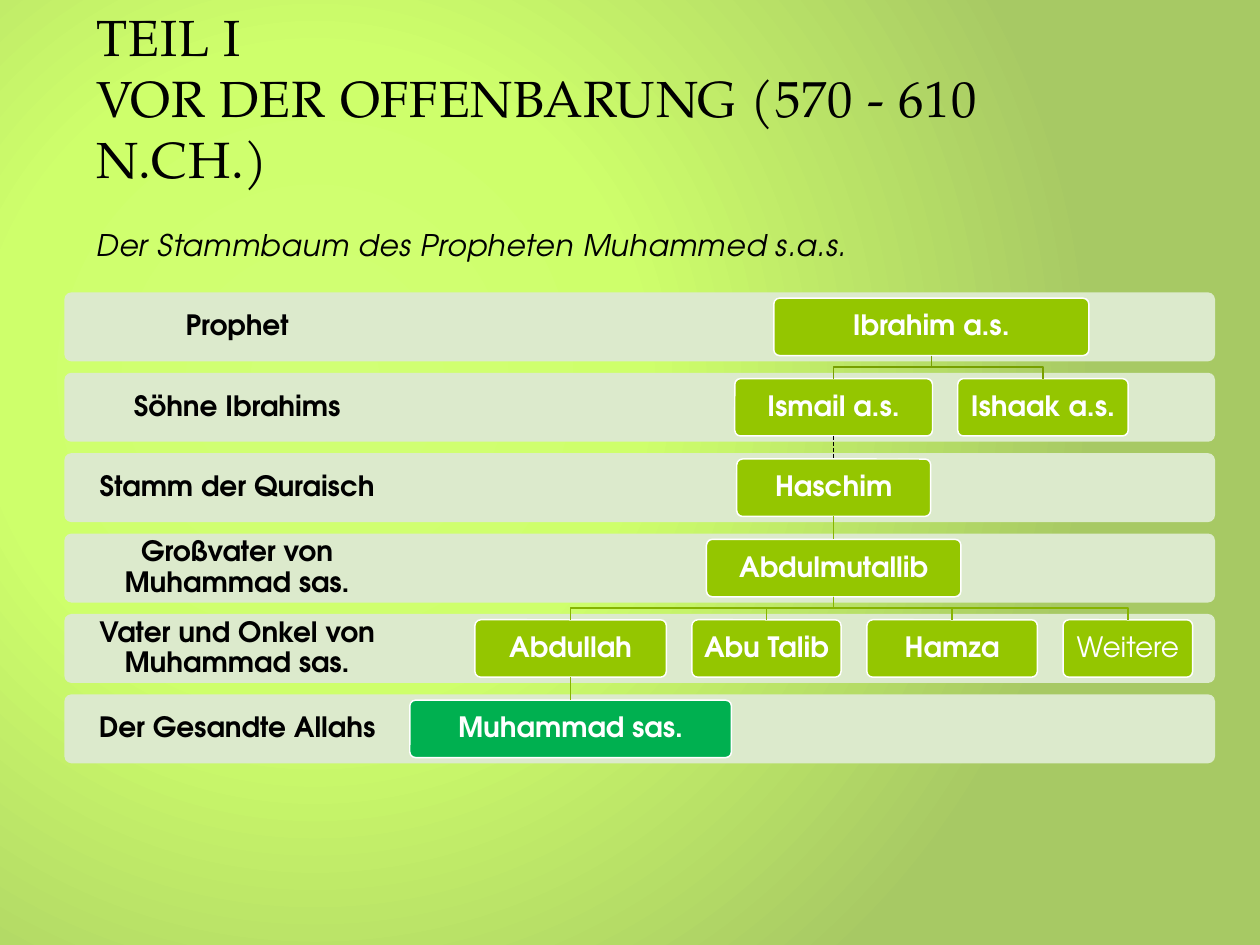
from dataclasses import dataclass
from typing import NamedTuple

from lxml.etree import SubElement
from pptx import Presentation
from pptx.dml.color import RGBColor
from pptx.enum.dml import MSO_LINE_DASH_STYLE as Dash
from pptx.enum.shapes import MSO_CONNECTOR as Connector, MSO_SHAPE as Shape
from pptx.enum.text import MSO_ANCHOR as Anchor, MSO_AUTO_SIZE as AutoSize, PP_ALIGN as Align
from pptx.oxml.ns import qn
from pptx.util import Pt


@dataclass(frozen=True)
class Theme:
    heading_font: str = "TeX Gyre Pagella"
    body_font: str = "TeX Gyre Adventor"
    title_size: float = 29
    subtitle_size: float = 17
    label_size: float = 16
    line_width: float = 0.85
    text: str = "000000"
    light: str = "FFFFFF"
    band: str = "DCEACC"
    node: str = "94C600"
    highlight: str = "00B050"
    first_branch: str = "779F00"
    branch: str = "86B400"
    gradient: tuple = ((0, "D1FF75"), (41, "CEFF6B"), (100, "A7C964"))


class Box(NamedTuple):
    left: float
    top: float
    width: float
    height: float

    def points(self):
        return [Pt(value) for value in self]


class Person(NamedTuple):
    name: str
    row: int
    center: float  # measured from the left of the tree
    width: float
    parent: str = ""


THEME = Theme()
ROW_PITCH, ROW_HEIGHT, NODE_INSET = 45.94, 39.4, 3.3
NODE_HEIGHT = ROW_HEIGHT - 2 * NODE_INSET
LABEL_WIDTH = 197.5

GENERATIONS = [
    "Prophet", "Söhne Ibrahims", "Stamm der Quraisch", "Großvater von Muhammad sas.",
    "Vater und Onkel von Muhammad sas.", "Der Gesandte Allahs",
]
PEOPLE = [
    Person("Ibrahim a.s.", 0, 495.4, 180),
    Person("Ismail a.s.", 1, 439.6, 113, "Ibrahim a.s."),
    Person("Ishaak a.s.", 1, 559.2, 97.4, "Ibrahim a.s."),
    Person("Haschim", 2, 439.6, 110.8, "Ismail a.s."),
    Person("Abdulmutallib", 3, 439.6, 145.4, "Haschim"),
    Person("Abdullah", 4, 289.3, 109.4, "Abdulmutallib"),
    Person("Abu Talib", 4, 401.2, 85.2, "Abdulmutallib"),
    Person("Hamza", 4, 507.3, 97.4, "Abdulmutallib"),
    Person("Weitere", 4, 607.7, 74, "Abdulmutallib"),
    Person("Muhammad sas.", 5, 289.3, 183.8, "Abdullah"),
]


def color(value):
    return RGBColor.from_string(value)


def add_run(paragraph, text, font, size, fill, bold=False, italic=False, spacing=0):
    run = paragraph.add_run()
    run.text = text
    run.font.name, run.font.size = font, Pt(size)
    run.font.bold, run.font.italic = bold, italic
    run.font.color.rgb = color(fill)
    if spacing:
        run._r.get_or_add_rPr().set("spc", str(round(spacing * 100)))


def add_label(shape, text, fill, inset, bold=True):
    frame = shape.text_frame
    frame.word_wrap = True
    frame.vertical_anchor = Anchor.MIDDLE
    frame.margin_left = frame.margin_right = Pt(inset)
    frame.margin_top = frame.margin_bottom = Pt(inset)
    paragraph = frame.paragraphs[0]
    paragraph.alignment = Align.CENTER
    paragraph.line_spacing = 0.9
    add_run(paragraph, text, THEME.body_font, THEME.label_size, fill, bold)


def add_round_box(slide, box, fill):
    shape = slide.shapes.add_shape(Shape.ROUNDED_RECTANGLE, *box.points())
    shape.adjustments[0] = 0.1
    shape.shadow.inherit = False
    shape.fill.solid()
    shape.fill.fore_color.rgb = color(fill)
    shape.line.fill.background()
    return shape


def style_line(line, value):
    line.color.rgb = color(value)
    line.width = Pt(THEME.line_width)


def set_background(slide):
    slide.background.fill.solid()
    properties = slide._element.find(".//" + qn("p:bgPr"))
    properties.remove(properties[0])
    gradient = SubElement(properties, qn("a:gradFill"), rotWithShape="1")
    properties.insert(0, gradient)
    stops = SubElement(gradient, qn("a:gsLst"))
    for position, value in THEME.gradient:
        stop = SubElement(stops, qn("a:gs"), pos=str(position * 1000))
        SubElement(stop, qn("a:srgbClr"), val=value)
    circle = SubElement(gradient, qn("a:path"))
    circle.set("path", "circle")
    SubElement(circle, qn("a:fillToRect"), l="50000", t="80000", r="100000", b="100000")


def place_title(slide, box):
    title = slide.shapes.title
    title.left, title.top, title.width, title.height = box.points()
    frame = title.text_frame
    frame.word_wrap, frame.auto_size = True, AutoSize.NONE
    frame.vertical_anchor = Anchor.BOTTOM
    frame.margin_right = Pt(36)
    paragraph = frame.paragraphs[0]
    paragraph.alignment = Align.LEFT
    style = (THEME.heading_font, THEME.title_size, THEME.text)
    add_run(paragraph, "TEIL I", *style, spacing=0.5)
    paragraph.add_line_break()
    add_run(paragraph, "VOR DER OFFENBARUNG (570 - 610 N.CH.)", *style, spacing=0.5)


def place_subtitle(slide, box):
    frame = slide.shapes.add_textbox(*box.points()).text_frame
    frame.word_wrap = True
    add_run(frame.paragraphs[0], "Der Stammbaum des Propheten Muhammed s.a.s.",
            THEME.body_font, THEME.subtitle_size, THEME.text, italic=True, spacing=0.3)


def join_people(slide, parent, child, value, dashed):
    start_x, start_y = parent.left + parent.width // 2, parent.top + parent.height
    end_x, end_y = child.left + child.width // 2, child.top
    if abs(start_x - end_x) < Pt(0.5):
        line = slide.shapes.add_connector(Connector.STRAIGHT, start_x, start_y, end_x, end_y)
        line.begin_connect(parent, 2)
        line.end_connect(child, 0)
        SubElement(line._element.spPr, qn("a:effectLst"))
        style_line(line.line, value)
        if dashed:
            line.line.dash_style = Dash.SQUARE_DOT
        return
    # A sideways branch turns halfway between the two rows
    middle = (start_y + end_y) // 2
    builder = slide.shapes.build_freeform(start_x, start_y)
    builder.add_line_segments([(start_x, middle), (end_x, middle), (end_x, end_y)], close=False)
    branch = builder.convert_to_shape()
    branch.shadow.inherit = False
    branch.fill.background()
    style_line(branch.line, value)


def place_family_tree(slide, box):
    # Generation bands with their labels
    for row, generation in enumerate(GENERATIONS):
        band = Box(box.left, box.top + row * ROW_PITCH, box.width, ROW_HEIGHT)
        add_round_box(slide, band, THEME.band)
        label = slide.shapes.add_textbox(*band._replace(width=LABEL_WIDTH).points())
        add_label(label, generation, THEME.text, 8.5)

    # People, each joined to the parent
    nodes = {}
    for person in PEOPLE:
        node_box = Box(box.left + person.center - person.width / 2,
                       box.top + person.row * ROW_PITCH + NODE_INSET,
                       person.width, NODE_HEIGHT)
        last_row = person.row == len(GENERATIONS) - 1
        node = add_round_box(slide, node_box, THEME.highlight if last_row else THEME.node)
        style_line(node.line, THEME.light)
        add_label(node, person.name, THEME.light, 6, bold=person.name != "Weitere")
        nodes[person.name] = node
        if person.parent:
            dashed = person.name == "Haschim"
            value = THEME.first_branch if person.row == 1 else THEME.branch
            join_people(slide, nodes[person.parent], node,
                        THEME.text if dashed else value, dashed)


def main():
    presentation = Presentation()
    presentation.slide_width, presentation.slide_height = Pt(720), Pt(540)
    slide = presentation.slides.add_slide(presentation.slide_layouts[5])
    set_background(slide)
    place_title(slide, Box(48, 21.6, 624, 90))
    place_subtitle(slide, Box(48, 126, 624, 324))
    place_family_tree(slide, Box(36.8, 167.1, 657.5, 269))
    presentation.save("out.pptx")


if __name__ == "__main__":
    main()
